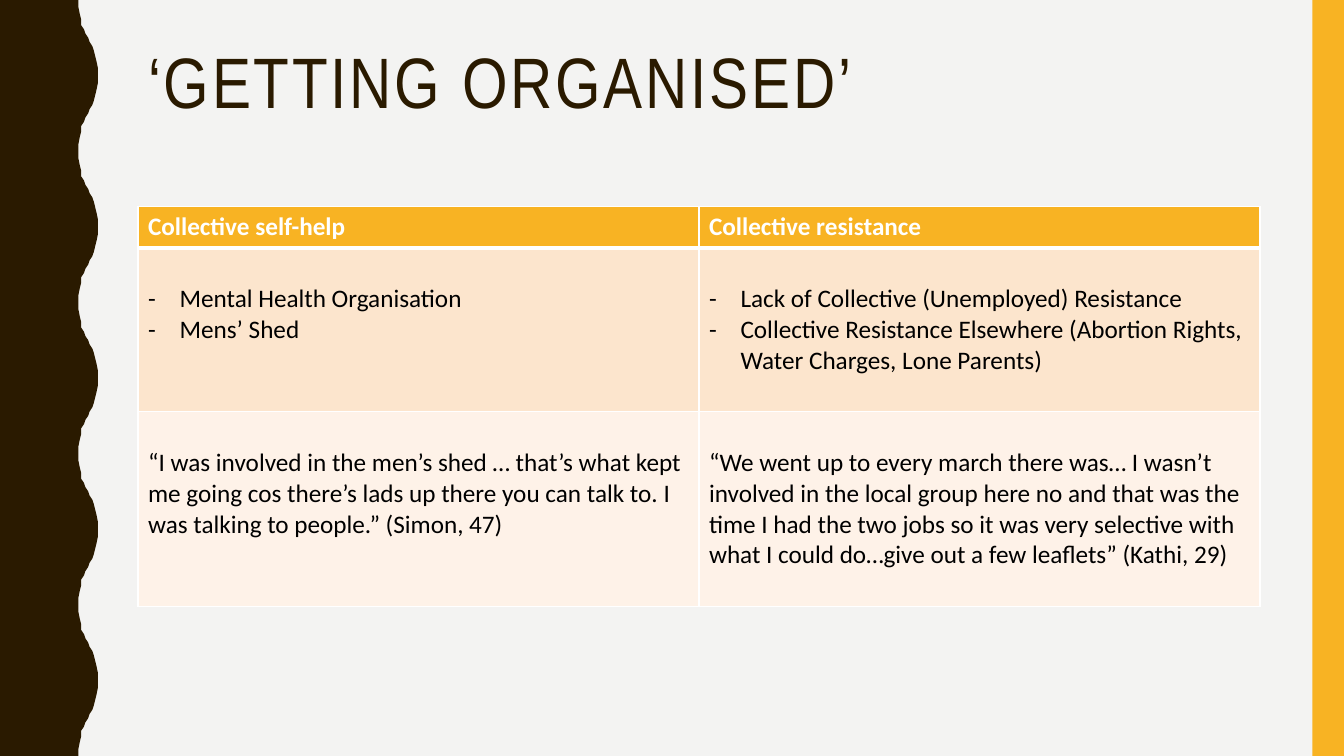
from lxml import etree
from pptx import Presentation
from pptx.dml.color import RGBColor
from pptx.enum import shapes, text
from pptx.oxml import ns
from pptx.util import Pt

DARK = RGBColor(0x2A, 0x1A, 0x00)
GOLD = RGBColor(0xF8, 0xB3, 0x23)
PALE = RGBColor(0xF3, 0xF3, 0xF2)
PEACH = RGBColor(0xFC, 0xE5, 0xCD)
CREAM = RGBColor(0xFE, 0xF2, 0xE8)
WHITE = RGBColor(0xFF, 0xFF, 0xFF)
BLACK = RGBColor(0x00, 0x00, 0x00)

WIDE, HIGH = 960, 540
CREST = [(0, 56.2), (5, 56.2), (10, 56.9), (14.4, 57.6), (18, 58.3),
         (21, 59.8), (24, 61.2), (27, 62.6), (30, 64.1), (33, 65.5),
         (36, 67), (39.6, 68.4), (44, 69.1), (49, 69.8), (54, 69.8)]
GAP = 22
ROWS = [
    {"high": 29.5, "fill": GOLD, "color": WHITE, "bold": True, "dash": False,
     "cells": [["Collective self-help"], ["Collective resistance"]]},
    {"high": 117, "fill": PEACH, "color": BLACK, "bold": False, "dash": True,
     "cells": [["Mental Health Organisation", "Mens’ Shed"],
               ["Lack of Collective (Unemployed) Resistance",
                "Collective Resistance Elsewhere (Abortion Rights, "
                "Water Charges, Lone Parents)"]]},
    {"high": 139, "fill": CREAM, "color": BLACK, "bold": False, "dash": False,
     "cells": [["“I was involved in the men’s shed … that’s what kept me going "
                "cos there’s lads up there you can talk to. I was talking to "
                "people.” (Simon, 47)"],
               ["“We went up to every march there was… I wasn’t involved in the "
                "local group here no and that was the time I had the two jobs so "
                "it was very selective with what I could do…give out a few "
                "leaflets” (Kathi, 29)"]]},
]


def apply(obj, vals):
    """Set each named attribute on the object."""
    for name, val in vals.items():
        setattr(obj, name, val)


def paint(shape, color):
    """Give the shape a plain fill with no line or shadow."""
    shape.shadow.inherit = False
    shape.fill.solid()
    shape.fill.fore_color.rgb = color
    shape.line.fill.background()


def add_wave(slide, high):
    """Draw the wavy band down the left edge."""
    span = 2 * CREST[-1][0]
    cycle = CREST + [(span - y, x) for y, x in CREST[-2::-1]]
    edge = [(x, top + y) for top in range(0, high, span) for y, x in cycle]
    form = slide.shapes.build_freeform(0, 0, scale=Pt(1))
    form.add_line_segments(edge + [(0, high)], close=True)
    paint(form.convert_to_shape(), DARK)


def add_bar(slide, left, top, wide, high):
    """Draw the gold bar."""
    box = [Pt(n) for n in (left, top, wide, high)]
    paint(slide.shapes.add_shape(shapes.MSO_SHAPE.RECTANGLE, *box), GOLD)


def add_title(slide, left, top, wide, high):
    """Place and format the title."""
    title = slide.shapes.title
    apply(title, {"left": Pt(left), "top": Pt(top),
                  "width": Pt(wide), "height": Pt(high)})
    frame = title.text_frame
    frame.text = "‘GETTING ORGANISED’"
    apply(frame, {"word_wrap": True, "auto_size": text.MSO_AUTO_SIZE.NONE,
                  "vertical_anchor": text.MSO_ANCHOR.TOP})
    para = frame.paragraphs[0]
    apply(para, {"alignment": text.PP_ALIGN.LEFT, "line_spacing": 0.9})
    run = para.runs[0]
    apply(run.font, {"name": "Arial Narrow", "size": Pt(51), "bold": False})
    run.font.color.rgb = DARK
    run.font._element.set("spc", "200")


def add_rules(cell, row):
    """Draw white borders, thick below the header."""
    props = cell._tc.get_or_add_tcPr()
    thick = {("T", 1), ("B", 0)}
    for side in "LRTB":
        width = 3 if (side, row) in thick else 1
        line = etree.SubElement(props, ns.qn(f"a:ln{side}"), w=str(Pt(width)))
        fill = etree.SubElement(line, ns.qn("a:solidFill"))
        etree.SubElement(fill, ns.qn("a:srgbClr"), val=str(WHITE))


def add_dash(para):
    """Give the paragraph a hanging dash."""
    props = para._p.get_or_add_pPr()
    props.set("marL", str(Pt(22.5)))
    props.set("indent", str(-Pt(22.5)))
    etree.SubElement(props, ns.qn("a:buFont"), typeface="Calibri")
    etree.SubElement(props, ns.qn("a:buChar"), char="-")


def fill_cell(cell, lines, spec, row):
    """Fill one table cell with its paragraphs."""
    add_rules(cell, row)
    cell.fill.solid()
    cell.fill.fore_color.rgb = spec["fill"]
    cell.margin_top = Pt(3.6 + (GAP if row else 0))
    frame = cell.text_frame
    frame.text = "\n".join(lines)
    for para in frame.paragraphs:
        font = para.runs[0].font
        apply(font, {"name": "Calibri", "size": Pt(18), "bold": spec["bold"]})
        font.color.rgb = spec["color"]
        if spec["dash"]:
            add_dash(para)


def add_grid(slide, left, top, wide):
    """Build the table of two kinds of collective action."""
    high = sum(spec["high"] for spec in ROWS)
    cols = len(ROWS[0]["cells"])
    box = [Pt(n) for n in (left, top, wide, high)]
    table = slide.shapes.add_table(len(ROWS), cols, *box).table
    for row, spec in enumerate(ROWS):
        table.rows[row].height = Pt(spec["high"])
        for col, lines in enumerate(spec["cells"]):
            fill_cell(table.cell(row, col), lines, spec, row)


def main():
    """Build and save the slide."""
    deck = Presentation()
    apply(deck, {"slide_width": Pt(WIDE), "slide_height": Pt(HIGH)})
    slide = deck.slides.add_slide(deck.slide_layouts[5])
    slide.background.fill.solid()
    slide.background.fill.fore_color.rgb = PALE
    add_wave(slide, HIGH)
    add_bar(slide, 937.5, 0, 22.5, HIGH)
    add_title(slide, 98.6, 30.2, 801.4, 117.4)
    add_grid(slide, 98.6, 147.6, 801.4)
    deck.save("out.pptx")


if __name__ == "__main__":
    main()
